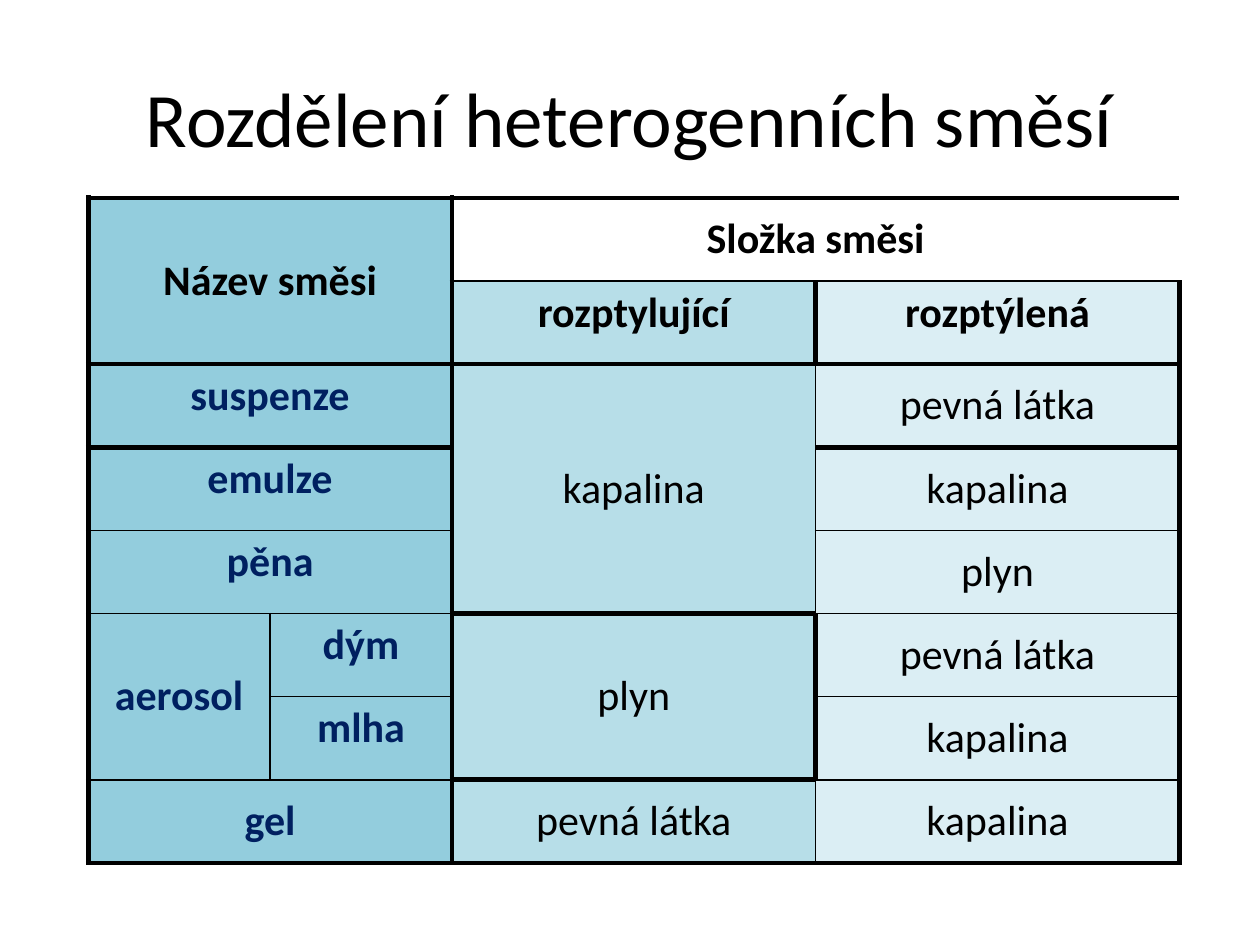
from dataclasses import dataclass

from lxml.etree import SubElement
from pptx import Presentation
from pptx.dml.color import RGBColor as Rgb
from pptx.enum.text import MSO_ANCHOR as Anchor, PP_ALIGN as Align
from pptx.oxml.ns import qn
from pptx.util import Inches, Pt


@dataclass(frozen=True)
class Theme:
    font: str = "Calibri"
    title_size: int = 44
    table_size: int = 24
    ink: str = "000000"
    name_ink: str = "002060"
    white: str = "FFFFFF"
    column_fills: tuple = ("93CDDD", "93CDDD", "B7DEE8", "DBEEF4")
    thin: int = 1
    heavy: int = 3


THEME = Theme()
WIDTH, HEIGHT = Inches(10), Inches(7.5)
ROWS = 8
COLUMN_SHARES = (1 / 6, 1 / 6, 1 / 3, 1 / 3)
HEADER_ROWS = 2
NAME_COLUMNS = 2

# row, column, rows spanned, columns spanned, wording, anchor
MIXTURES = [
    (0, 0, 2, 2, "Název směsi", Anchor.MIDDLE),
    (0, 2, 1, 2, "Složka směsi", Anchor.MIDDLE),
    (1, 2, 1, 1, "rozptylující", Anchor.TOP),
    (1, 3, 1, 1, "rozptýlená", Anchor.TOP),
    (2, 0, 1, 2, "suspenze", Anchor.TOP),
    (2, 2, 3, 1, "kapalina", Anchor.MIDDLE),
    (2, 3, 1, 1, "pevná látka", Anchor.MIDDLE),
    (3, 0, 1, 2, "emulze", Anchor.TOP),
    (3, 3, 1, 1, "kapalina", Anchor.MIDDLE),
    (4, 0, 1, 2, "pěna", Anchor.TOP),
    (4, 3, 1, 1, "plyn", Anchor.MIDDLE),
    (5, 0, 2, 1, "aerosol", Anchor.MIDDLE),
    (5, 1, 1, 1, "dým", Anchor.TOP),
    (5, 2, 2, 1, "plyn", Anchor.MIDDLE),
    (5, 3, 1, 1, "pevná látka", Anchor.MIDDLE),
    (6, 1, 1, 1, "mlha", Anchor.TOP),
    (6, 3, 1, 1, "kapalina", Anchor.MIDDLE),
    (7, 0, 1, 2, "gel", Anchor.MIDDLE),
    (7, 2, 1, 1, "pevná látka", Anchor.MIDDLE),
    (7, 3, 1, 1, "kapalina", Anchor.MIDDLE),
]

# Heavy rules: grid line -> the rows or columns along which it is heavy
HEAVY_VERTICAL = {0: range(8), 2: range(8), 3: (1, 5, 6), 4: range(8)}
HEAVY_HORIZONTAL = {0: range(4), 2: range(4), 3: (0, 1, 3), 5: (2,), 8: range(4)}


def format_text(frame, size, color, bold=False):
    for paragraph in frame.paragraphs:
        paragraph.alignment = Align.CENTER
        for run in paragraph.runs:
            run.font.name = THEME.font
            run.font.size = Pt(size)
            run.font.bold = bold
            run.font.color.rgb = Rgb.from_string(color)


def add_border(cell, side, weight):
    """Rule one side of a cell; call before filling, as lines precede the fill."""
    line = SubElement(cell._tc.get_or_add_tcPr(), qn(f"a:ln{side}"),
                      w=str(Pt(weight)))
    fill = SubElement(line, qn("a:solidFill"))
    SubElement(fill, qn("a:srgbClr"), val=THEME.ink)


def rule_cell(cell, row, column, region):
    """Rule the sides of a cell that lie on the edge of its merged region."""
    top, left, bottom, right = region
    sides = (
        ("L", column == left, HEAVY_VERTICAL, column, row),
        ("R", column + 1 == right, HEAVY_VERTICAL, column + 1, row),
        ("T", row == top, HEAVY_HORIZONTAL, row, column),
        ("B", row + 1 == bottom, HEAVY_HORIZONTAL, row + 1, column),
    )
    for side, on_edge, heavy_rules, grid_line, position in sides:
        if on_edge:
            is_heavy = position in heavy_rules.get(grid_line, ())
            add_border(cell, side, THEME.heavy if is_heavy else THEME.thin)


def place_title(slide, wording, left, top, width, height):
    title = slide.shapes.title
    title.left, title.top, title.width, title.height = left, top, width, height
    title.text_frame.text = wording
    title.text_frame.vertical_anchor = Anchor.MIDDLE
    format_text(title.text_frame, THEME.title_size, THEME.ink)


def place_mixtures(slide, left, top, width, height):
    grid = slide.shapes.add_table(ROWS, len(COLUMN_SHARES), left, top,
                                  width, height).table
    grid.first_row = grid.horz_banding = False
    for column, share in zip(grid.columns, COLUMN_SHARES):
        column.width = int(width * share)
    for grid_row in grid.rows:
        grid_row.height = height // ROWS

    for row, column, row_span, column_span, wording, anchor in MIXTURES:
        end_row, end_column = row + row_span, column + column_span
        is_header, is_name = row < HEADER_ROWS, column < NAME_COLUMNS
        spans_components = is_header and not is_name and column_span > 1
        fill = THEME.white if spans_components else THEME.column_fills[column]

        # Rules and fill of every grid cell in the region
        for r in range(row, end_row):
            for c in range(column, end_column):
                part = grid.cell(r, c)
                rule_cell(part, r, c, (row, column, end_row, end_column))
                part.fill.solid()
                part.fill.fore_color.rgb = Rgb.from_string(fill)

        # Merging and wording
        cell = grid.cell(row, column)
        if row_span * column_span > 1:
            cell.merge(grid.cell(end_row - 1, end_column - 1))
        cell.text_frame.text = wording
        cell.vertical_anchor = anchor
        color = THEME.name_ink if is_name and not is_header else THEME.ink
        format_text(cell.text_frame, THEME.table_size, color,
                    bold=is_header or is_name)


def main():
    deck = Presentation()
    deck.slide_width, deck.slide_height = WIDTH, HEIGHT
    slide = deck.slides.add_slide(deck.slide_layouts[5])
    place_title(slide, "Rozdělení heterogenních směsí",
                int(WIDTH * 0.05), int(HEIGHT * 0.04),
                int(WIDTH * 0.9), Inches(1.25))
    place_mixtures(slide, Inches(0.7), Inches(1.57), Inches(8.66), Inches(5.28))
    deck.save("out.pptx")


if __name__ == "__main__":
    main()
